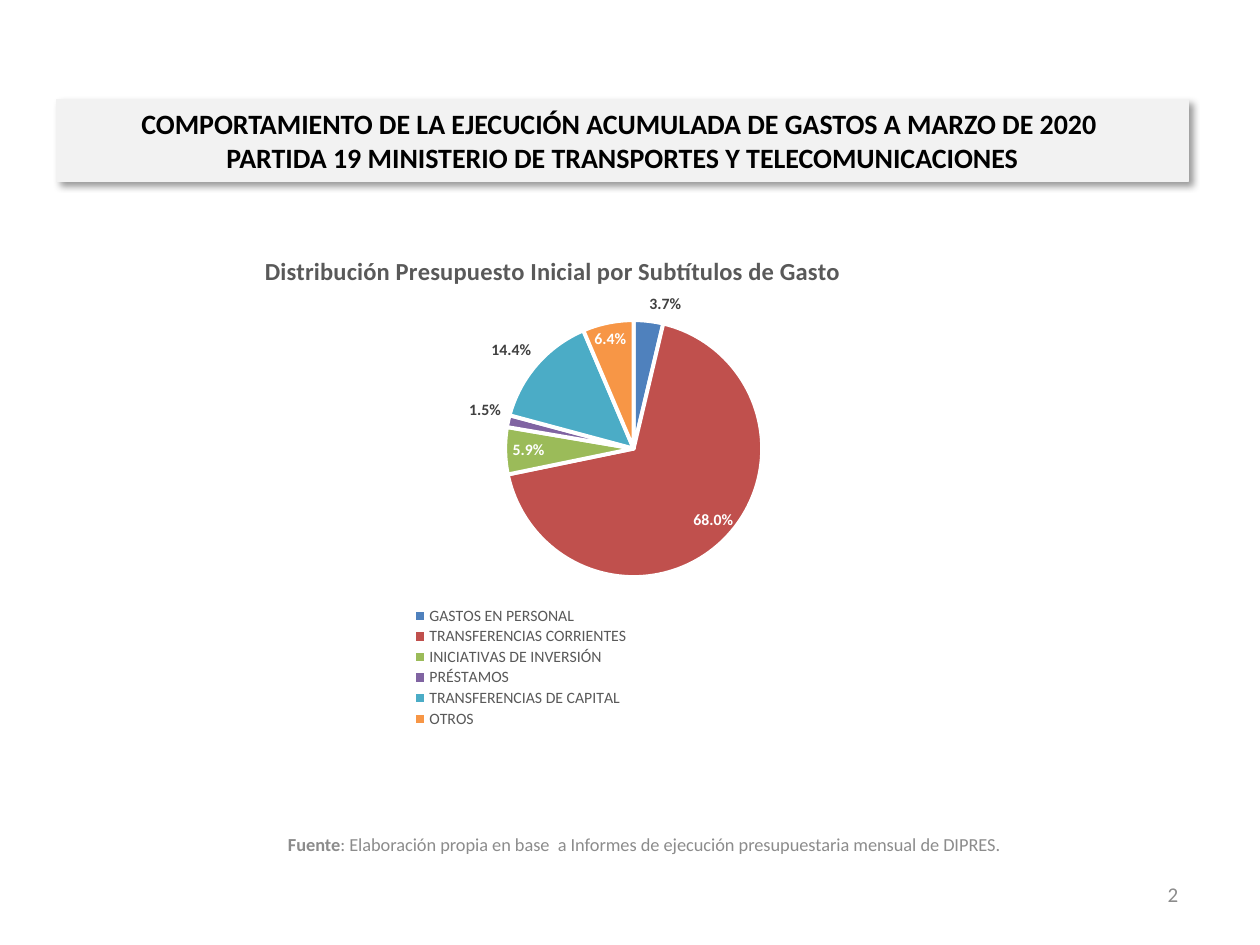
from lxml.etree import SubElement
from pptx import Presentation
from pptx.chart.data import CategoryChartData
from pptx.dml.color import RGBColor
from pptx.enum.chart import XL_CHART_TYPE, XL_LABEL_POSITION, XL_LEGEND_POSITION
from pptx.enum.shapes import MSO_SHAPE
from pptx.enum.text import MSO_ANCHOR, PP_ALIGN
from pptx.oxml import parse_xml
from pptx.oxml.ns import nsdecls, qn
from pptx.util import Inches, Pt

FONT = "Calibri"
BLACK = RGBColor(0x00, 0x00, 0x00)
WHITE = RGBColor(0xFF, 0xFF, 0xFF)
PALE_GREY = RGBColor(0xF2, 0xF2, 0xF2)
MID_GREY = RGBColor(0x8C, 0x8C, 0x8C)
TEXT_GREY = RGBColor(0x59, 0x59, 0x59)
DARK_GREY = RGBColor(0x40, 0x40, 0x40)

INSIDE = XL_LABEL_POSITION.INSIDE_END
OUTSIDE = XL_LABEL_POSITION.OUTSIDE_END

# Category, share in percent, slice colour, label position
SLICES = [
    ("GASTOS EN PERSONAL", 3.7, RGBColor(0x4F, 0x81, 0xBD), OUTSIDE),
    ("TRANSFERENCIAS CORRIENTES", 68.0, RGBColor(0xC0, 0x50, 0x4D), INSIDE),
    ("INICIATIVAS DE INVERSIÓN", 5.9, RGBColor(0x9B, 0xBB, 0x59), INSIDE),
    ("PRÉSTAMOS", 1.5, RGBColor(0x80, 0x64, 0xA2), OUTSIDE),
    ("TRANSFERENCIAS DE CAPITAL", 14.4, RGBColor(0x4B, 0xAC, 0xC6), OUTSIDE),
    ("OTROS", 6.4, RGBColor(0xF7, 0x96, 0x46), INSIDE),
]
# Shift of a label from its automatic place, by category
LABEL_SHIFTS = {
    "TRANSFERENCIAS CORRIENTES": (Inches(0.12), Inches(-0.05)),
    "OTROS": (Inches(-0.12), Inches(0)),
}


def set_font(font, size, color, bold=False):
    font.name = FONT
    font.size = Pt(size)
    font.color.rgb = color
    font.bold = bold


def add_heading(slide, box):
    sp = slide.shapes.add_shape(MSO_SHAPE.RECTANGLE, *box)
    sp.fill.solid()
    sp.fill.fore_color.rgb = PALE_GREY
    sp.line.color.rgb = PALE_GREY
    sp.line.width = Pt(0.75)
    # Soft shadow towards the lower right
    sp._element.spPr.append(parse_xml(
        f'<a:effectLst {nsdecls("a")}>'
        f'<a:outerShdw blurRad="{Pt(4)}" dist="{Pt(3)}" dir="2700000" algn="tl" rotWithShape="0">'
        '<a:srgbClr val="000000"><a:alpha val="40000"/></a:srgbClr>'
        '</a:outerShdw></a:effectLst>'))
    tf = sp.text_frame
    tf.word_wrap = True
    tf.vertical_anchor = MSO_ANCHOR.MIDDLE
    p = tf.paragraphs[0]
    p.text = ("COMPORTAMIENTO DE LA EJECUCIÓN ACUMULADA DE GASTOS A MARZO DE 2020 \v"
              "PARTIDA 19 MINISTERIO DE TRANSPORTES Y TELECOMUNICACIONES")
    p.alignment = PP_ALIGN.CENTER
    set_font(p.font, 16, BLACK, True)


def set_layout(element, x, y, w=None, h=None, mode="edge", inner=False):
    """Place a chart part by fractions of the chart area."""
    layout = element.find(qn("c:layout"))
    if layout is None:
        layout = element.makeelement(qn("c:layout"))
        leading = (qn("c:idx"), qn("c:tx"), qn("c:legendPos"))
        before = [child for child in element if child.tag in leading]
        # A label's text follows its layout, so only its index comes first
        element.insert(1 if before and before[0].tag == leading[0] else len(before), layout)
    manual = SubElement(layout, qn("c:manualLayout"))
    settings = [("layoutTarget", "inner" if inner else None),
                ("xMode", mode), ("yMode", mode),
                ("x", x), ("y", y), ("w", w), ("h", h)]
    for name, value in settings:
        if value is not None:
            SubElement(manual, qn(f"c:{name}")).set("val", str(value))


def add_budget_pie(slide, box):
    data = CategoryChartData(number_format='0.0"%"')
    data.categories = [name for name, *_ in SLICES]
    data.add_series("Series 1", [share for _, share, *_ in SLICES])
    chart = slide.shapes.add_chart(XL_CHART_TYPE.PIE, *box, data).chart
    set_font(chart.font, 10, BLACK)

    # Title
    chart.has_title = True
    p = chart.chart_title.text_frame.paragraphs[0]
    p.text = "Distribución Presupuesto Inicial por Subtítulos de Gasto"
    set_font(p.font, 14, TEXT_GREY, True)
    chart.chart_title.include_in_layout = False
    set_layout(chart.chart_title._element, 0.18, 0.05)

    # Legend
    chart.has_legend = True
    legend = chart.legend
    legend.position = XL_LEGEND_POSITION.BOTTOM
    legend.include_in_layout = False
    set_font(legend.font, 9, TEXT_GREY)
    set_layout(legend._element, 0.29, 0.7, 0.24, 0.23)

    # Slices and their labels
    plot = chart.plots[0]
    plot.vary_by_categories = True
    set_layout(chart._chartSpace.chart.plotArea, 0.02, 0.18, 0.98, 0.47, inner=True)
    _, _, width, height = box
    for i, (name, _, color, position) in enumerate(SLICES):
        point = plot.series[0].points[i]
        point.format.fill.solid()
        point.format.fill.fore_color.rgb = color
        point.format.line.color.rgb = WHITE
        point.format.line.width = Pt(2.25)
        label = point.data_label
        set_font(label.font, 9, WHITE if position == INSIDE else DARK_GREY, True)
        label.position = position
        if name in LABEL_SHIFTS:
            dx, dy = LABEL_SHIFTS[name]
            dLbl = plot.series[0]._element.dLbls.get_dLbl_for_point(i)
            set_layout(dLbl, dx / width, dy / height, mode="factor")


def add_footer_text(slide, box, runs, size, alignment):
    tf = slide.shapes.add_textbox(*box).text_frame
    tf.word_wrap = True
    tf.vertical_anchor = MSO_ANCHOR.MIDDLE
    p = tf.paragraphs[0]
    p.alignment = alignment
    for text, bold in runs:
        r = p.add_run()
        r.text = text
        set_font(r.font, size, MID_GREY, bold)


def main():
    prs = Presentation()
    prs.slide_width, prs.slide_height = Inches(10), Inches(7.5)
    slide = prs.slides.add_slide(prs.slide_layouts[6])
    left, width = Inches(0.45), Inches(8.98)

    # Source note and page number
    add_footer_text(
        slide, (Inches(0.81), Inches(6.5), Inches(8.61), Inches(0.4)),
        [("Fuente", True),
         (": Elaboración propia en base  a Informes de ejecución presupuestaria "
          "mensual de DIPRES.", False)],
        10.5, PP_ALIGN.CENTER)
    add_footer_text(slide, (Inches(7.12), Inches(6.9), Inches(2.33), Inches(0.4)),
                    [("2", False)], 12, PP_ALIGN.RIGHT)

    add_heading(slide, (left, Inches(0.79), width, Inches(0.65)))
    add_budget_pie(slide, (left, Inches(1.76), width, Inches(4.34)))
    prs.save("out.pptx")


if __name__ == "__main__":
    main()
